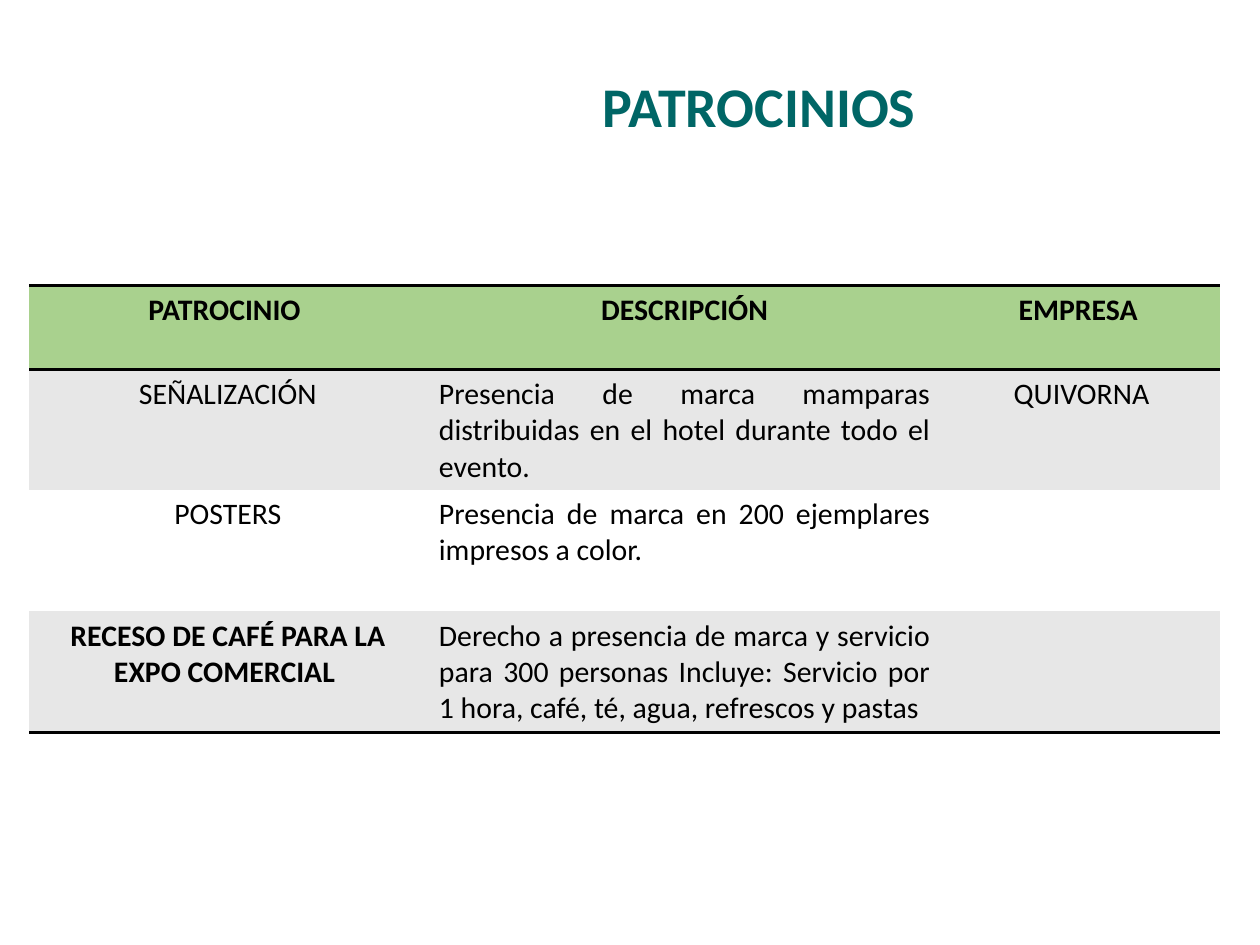
from lxml import etree
from pptx import Presentation
from pptx.dml.color import RGBColor
from pptx.enum.text import MSO_ANCHOR, PP_ALIGN
from pptx.oxml.ns import qn
from pptx.util import Pt

CENTER, JUSTIFY = PP_ALIGN.CENTER, PP_ALIGN.JUSTIFY
TOP = MSO_ANCHOR.TOP
FONT = "Calibri"
COLORS = {"title": "006666", "text": "000000", "rule": "000000",
          "header": "A9D18E", "band": "E7E7E7", "plain": "FFFFFF"}
NO_STYLE = "{2D5ABB26-0587-4C30-8999-92F81FD0307C}"
COL_WIDTHS = [226.8, 295.2, 158.4]
ROW_HEIGHTS = [48, 68.4, 69.6, 69]
ROWS = [
    ["PATROCINIO ", "DESCRIPCIÓN", "EMPRESA "],
    ["SEÑALIZACIÓN",
     "Presencia de marca mamparas distribuidas en el hotel durante todo el evento.",
     "QUIVORNA"],
    ["POSTERS", "Presencia de marca en 200 ejemplares impresos a color.", ""],
    ["RECESO DE CAFÉ PARA LA EXPO COMERCIAL ",
     "Derecho a presencia de marca y servicio para 300 personas Incluye: "
     "Servicio por 1 hora, café, té, agua, refrescos y pastas", ""],
]


def rgb(name):
    return RGBColor.from_string(COLORS[name])


def format_paragraph(p, size, color, bold, align):
    p.alignment = align
    p.font.name = FONT
    p.font.size = Pt(size)
    p.font.bold = bold
    p.font.color.rgb = rgb(color)
    for r in p.runs:
        r.font.name = FONT
        r.font.size = Pt(size)
        r.font.bold = bold
        r.font.color.rgb = rgb(color)


def add_title(s, x, y, w, h):
    tf = s.shapes.add_textbox(Pt(x), Pt(y), Pt(w), Pt(h)).text_frame
    tf.word_wrap = True
    tf.text = "PATROCINIOS"
    format_paragraph(tf.paragraphs[0], 32, "title", True, CENTER)


def add_rules(cell, sides, width=2):
    """Draw black borders on the given sides, in the order T, B."""
    tc_pr = cell._tc.get_or_add_tcPr()
    for i, side in enumerate(sides):
        ln = etree.Element(qn(f"a:ln{side}"), w=str(Pt(width)))
        fill = etree.SubElement(ln, qn("a:solidFill"))
        etree.SubElement(fill, qn("a:srgbClr"), val=COLORS["rule"])
        tc_pr.insert(i, ln)


def add_sponsorship_table(s, x, y):
    table = s.shapes.add_table(
        len(ROWS), len(COL_WIDTHS), Pt(x), Pt(y),
        Pt(sum(COL_WIDTHS)), Pt(sum(ROW_HEIGHTS))).table
    table.horz_banding = False
    table._tbl.tblPr.find(qn("a:tableStyleId")).text = NO_STYLE
    for column, width in zip(table.columns, COL_WIDTHS):
        column.width = Pt(width)
    last = len(ROWS) - 1
    for i, (texts, height) in enumerate(zip(ROWS, ROW_HEIGHTS)):
        table.rows[i].height = Pt(height)
        fill = "header" if i == 0 else "band" if i % 2 else "plain"
        sides = {0: "TB", last: "B"}.get(i, "")
        for j, text in enumerate(texts):
            cell = table.cell(i, j)
            cell.text = text
            cell.vertical_anchor = TOP
            cell.fill.solid()
            cell.fill.fore_color.rgb = rgb(fill)
            add_rules(cell, sides)
            bold = i == 0 or (i == last and j == 0)
            align = JUSTIFY if i and j == 1 else CENTER
            format_paragraph(cell.text_frame.paragraphs[0], 17, "text", bold, align)


def main():
    prs = Presentation()
    prs.slide_width, prs.slide_height = Pt(720), Pt(540)
    s = prs.slides.add_slide(prs.slide_layouts[6])
    add_title(s, 181.4, 37.4, 504.7, 46)
    add_sponsorship_table(s, 16.8, 163.4)
    prs.save("out.pptx")


if __name__ == "__main__":
    main()
